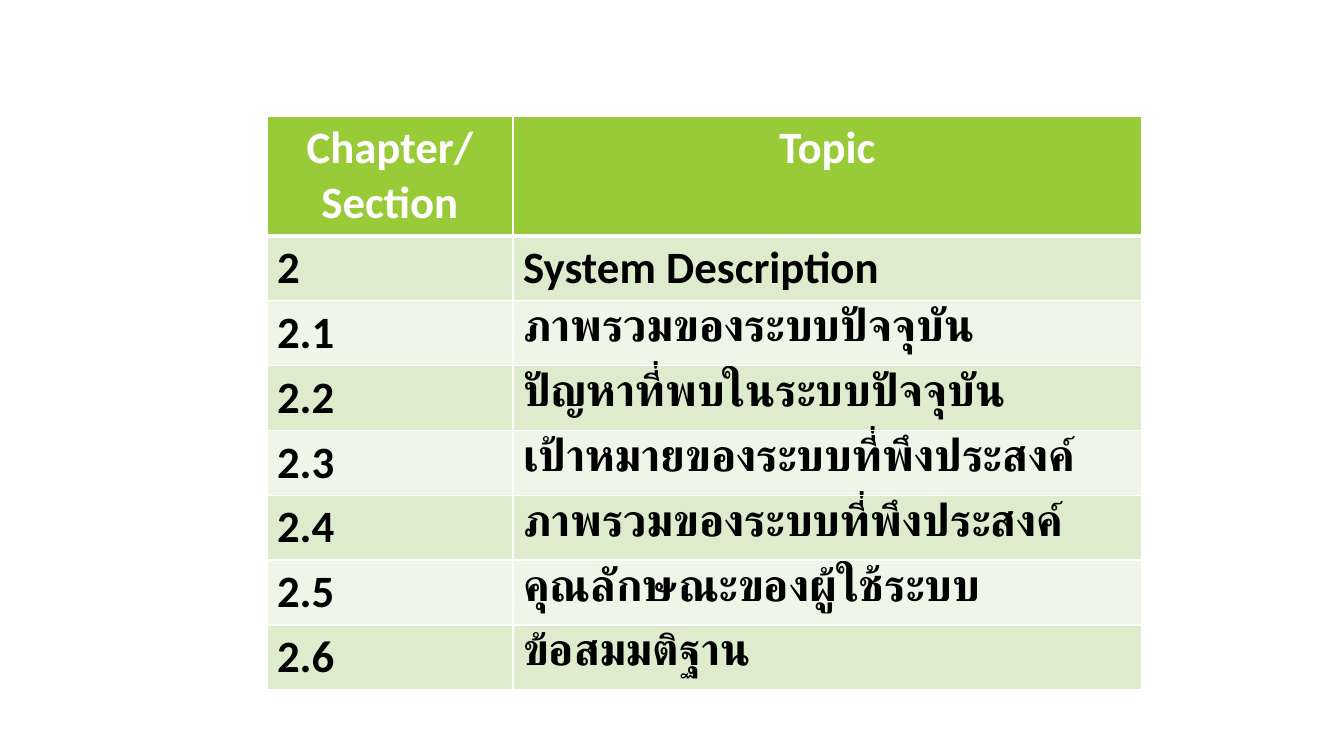
from dataclasses import dataclass

from lxml.etree import SubElement
from pptx import Presentation
from pptx.dml.color import RGBColor as Color
from pptx.enum.text import PP_ALIGN as Align
from pptx.oxml.ns import qn
from pptx.util import Pt

EMU_PER_PX = 914400 / 100.8


def px(length):
    return round(length * EMU_PER_PX)


@dataclass(frozen=True)
class Theme:
    font: str = "Calibri"
    size: int = 32
    header_fill: str = "99CB38"
    header_text: str = "FFFFFF"
    body_text: str = "000000"
    bands: tuple = ("DEECCE", "EFF6E8")
    border: str = "FFFFFF"
    border_width: int = 1
    header_rule: int = 3


class Slide:
    def __init__(self, deck, theme):
        self.theme = theme
        self.page = deck.slides.add_slide(deck.slide_layouts[6])

    def table(self, left, top, widths, row_height, rows):
        frame = self.page.shapes.add_table(
            len(rows), len(widths), px(left), px(top),
            px(sum(widths)), px(row_height * len(rows)))
        grid = frame.table
        for column, width in zip(grid.columns, widths):
            column.width = px(width)
        for row_index, texts in enumerate(rows):
            grid.rows[row_index].height = px(row_height)
            for column_index, text in enumerate(texts):
                self.cell(grid.cell(row_index, column_index), text, row_index)

    def cell(self, cell, text, row_index):
        theme = self.theme
        header = row_index == 0
        fill = theme.header_fill if header else theme.bands[(row_index - 1) % 2]
        para = cell.text_frame.paragraphs[0]
        para.alignment = Align.CENTER if header else Align.LEFT
        span = para.add_run()
        span.text = text
        span.font.name = theme.font
        span.font.size = Pt(theme.size)
        span.font.bold = True
        span.font.color.rgb = Color.from_string(
            theme.header_text if header else theme.body_text)
        self.borders(cell, theme.header_rule if header else theme.border_width)
        cell.fill.solid()
        cell.fill.fore_color.rgb = Color.from_string(fill)

    def borders(self, cell, bottom_width):
        properties = cell._tc.get_or_add_tcPr()
        for side in "LRTB":
            width = bottom_width if side == "B" else self.theme.border_width
            line = SubElement(properties, qn(f"a:ln{side}"), w=str(Pt(width)))
            solid = SubElement(line, qn("a:solidFill"))
            SubElement(solid, qn("a:srgbClr"), val=self.theme.border)


def main():
    deck = Presentation()
    deck.slide_width, deck.slide_height = px(1344), px(756)
    slide = Slide(deck, Theme())
    topics = [
        "ภาพรวมของระบบปัจจุบัน",
        "ปัญหาที่พบในระบบปัจจุบัน",
        "เป้าหมายของระบบที่พึงประสงค์",
        "ภาพรวมของระบบที่พึงประสงค์",
        "คุณลักษณะของผู้ใช้ระบบ",
        "ข้อสมมติฐาน",
    ]
    rows = [("Chapter/Section", "Topic"), ("2", "System Description")]
    rows += [(f"2.{number}", topic) for number, topic in enumerate(topics, 1)]
    slide.table(267, 116, (246, 629), 63, rows)
    deck.save("out.pptx")


if __name__ == "__main__":
    main()
